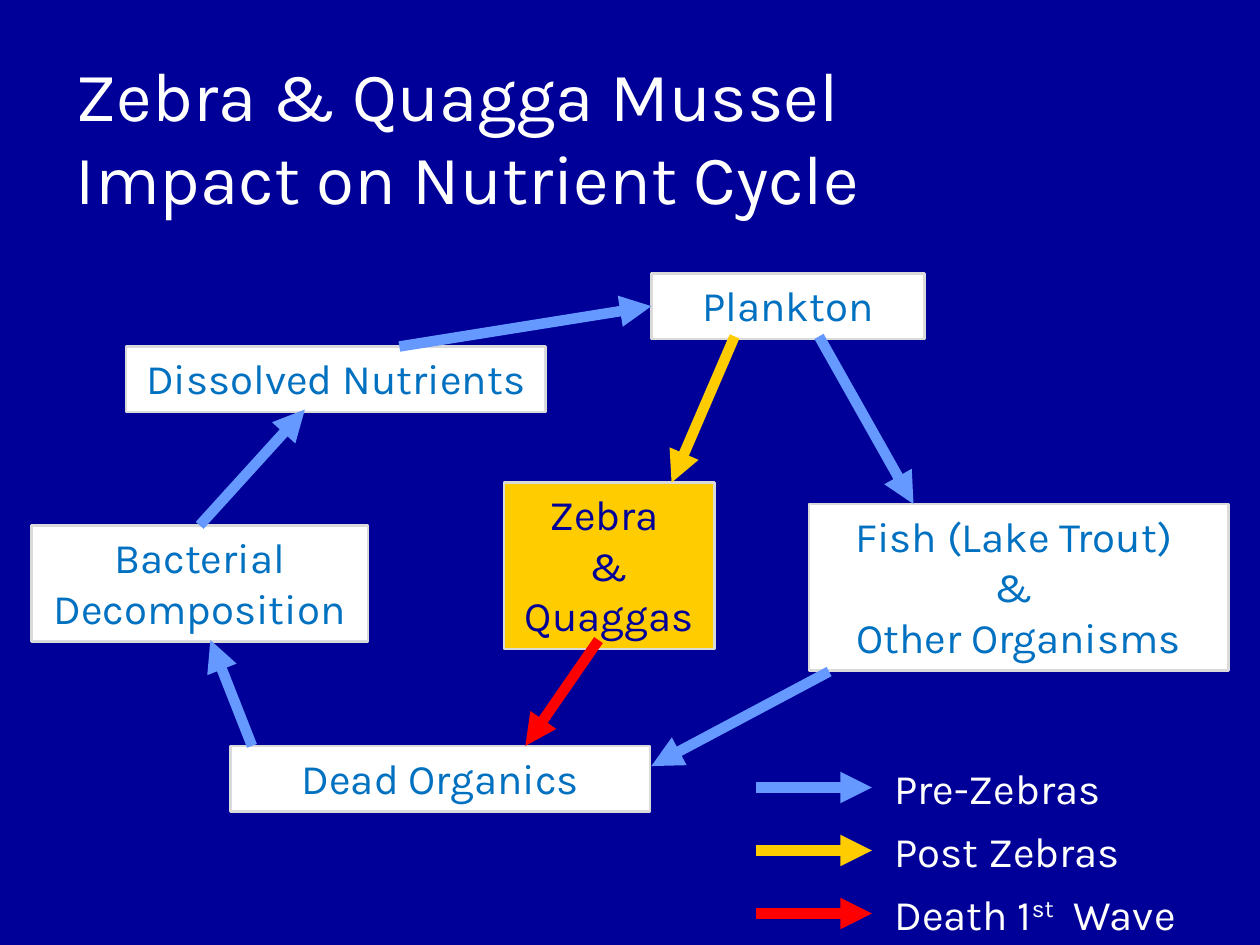
from lxml import etree
from pptx import Presentation
from pptx.dml.color import RGBColor
from pptx.enum.shapes import MSO_CONNECTOR, MSO_SHAPE
from pptx.enum.text import MSO_ANCHOR, MSO_AUTO_SIZE, PP_ALIGN
from pptx.oxml.ns import qn
from pptx.util import Inches, Pt

RECT = MSO_SHAPE.RECTANGLE
STRAIGHT = MSO_CONNECTOR.STRAIGHT
MIDDLE = MSO_ANCHOR.MIDDLE
GROW, FIXED = MSO_AUTO_SIZE.SHAPE_TO_FIT_TEXT, MSO_AUTO_SIZE.NONE
LEFT, CENTER = PP_ALIGN.LEFT, PP_ALIGN.CENTER
TOP_SIDE, LEFT_SIDE = 0, 1

COLORS = {
    "navy": "000099",
    "white": "FFFFFF",
    "edge": "DADADA",
    "text": "0070C0",
    "blue": "6699FF",
    "gold": "FFCC00",
    "red": "FF0000",
}


def color(name):
    return RGBColor.from_string(COLORS[name])


class Deck:
    font = "Karla"
    size = 24

    def __init__(self):
        self.prs = Presentation()
        self.prs.slide_width, self.prs.slide_height = Inches(10), Inches(7.5)
        self.slide = self.prs.slides.add_slide(self.prs.slide_layouts[5])
        fill = self.slide.background.fill
        fill.solid()
        fill.fore_color.rgb = color("navy")

    def run(self, para, text, ink, size=None, raised=False):
        run = para.add_run()
        run.text = text
        run.font.name = self.font
        run.font.size = Pt(size or self.size)
        run.font.color.rgb = color(ink)
        if raised:
            run.font._element.set("baseline", "30000")

    def lines(self, para, lines, ink, size=None):
        for i, line in enumerate(lines):
            if i:
                para.add_line_break()
            self.run(para, line, ink, size)

    def title(self, lines, at, size):
        shape = self.slide.shapes.title
        shape.left, shape.top, shape.width, shape.height = map(Inches, at)
        frame = shape.text_frame
        frame.auto_size = FIXED
        frame.vertical_anchor = MIDDLE
        para = frame.paragraphs[0]
        para.alignment = LEFT
        self.lines(para, lines, "white", size)

    def box(self, lines, at, fill="white", ink="text"):
        shape = self.slide.shapes.add_shape(RECT, *map(Inches, at))
        shape.shadow.inherit = False
        shape.fill.solid()
        shape.fill.fore_color.rgb = color(fill)
        shape.line.color.rgb = color("edge")
        shape.line.width = Pt(1.5)
        frame = shape.text_frame
        frame.word_wrap = True
        frame.auto_size = GROW
        frame.vertical_anchor = MSO_ANCHOR.TOP
        para = frame.paragraphs[0]
        para.alignment = CENTER
        self.lines(para, lines, ink)
        return shape

    def arrow(self, start, end, ink):
        line = self.slide.shapes.add_connector(
            STRAIGHT, *map(Inches, start + end))
        line.line.color.rgb = color(ink)
        line.line.width = Pt(6)
        props = line._element.spPr
        tip = etree.SubElement(props.find(qn("a:ln")), qn("a:tailEnd"))
        tip.set("type", "triangle")
        etree.SubElement(props, qn("a:effectLst"))
        return line

    def label(self, parts, at):
        shape = self.slide.shapes.add_textbox(*map(Inches, at))
        frame = shape.text_frame
        frame.word_wrap = True
        frame.auto_size = GROW
        for text, raised in parts:
            self.run(frame.paragraphs[0], text, "white", raised=raised)


def main():
    deck = Deck()
    deck.title(["Zebra & Quagga Mussel", "Impact on Nutrient Cycle"],
               (0.5, 0.32, 9, 1.51), 39.6)

    # Stages of the cycle
    plankton = deck.box(["Plankton"], (5.17, 2.17, 2.17, 0.52))
    deck.box(["Fish (Lake Trout) ", "& ", "Other Organisms"],
             (6.42, 4, 3.33, 1.32))
    deck.box(["Dead Organics"], (1.83, 5.92, 3.33, 0.52))
    decay = deck.box(["Bacterial Decomposition"], (0.25, 4.17, 2.67, 0.92))
    deck.box(["Dissolved Nutrients"], (1, 2.75, 3.33, 0.52))
    deck.box(["Zebra ", "& Quaggas"], (4, 3.83, 1.67, 1.32), "gold", "navy")

    # Flows between stages
    flows = [
        ((6.5, 2.67), (7.25, 4), "blue"),
        ((6.58, 5.33), (5.17, 6.08), "blue"),
        ((2, 5.92), (1.67, 5.08), "blue"),
        ((5.83, 2.67), (5.33, 3.83), "gold"),
        ((4.75, 5.08), (4.17, 5.92), "red"),
    ]
    for start, end, ink in flows:
        deck.arrow(start, end, ink)
    rise = deck.arrow((1.58, 4.17), (2.42, 3.25), "blue")
    rise.begin_connect(decay, TOP_SIDE)
    feed = deck.arrow((3.17, 2.75), (5.17, 2.42), "blue")
    feed.end_connect(plankton, LEFT_SIDE)

    # Legend
    legend = [
        ("blue", 2.67, [("Pre-Zebras", False)]),
        ("gold", 2, [("Post Zebras", False)]),
        ("red", 3, [("Death 1", False), ("st", True), ("  Wave", False)]),
    ]
    for i, (ink, width, parts) in enumerate(legend):
        top = 6 + 0.5 * i
        deck.arrow((6, top + 0.25), (6.92, top + 0.25), ink)
        deck.label(parts, (7, top, width, 0.5))

    deck.prs.save("out.pptx")


if __name__ == "__main__":
    main()
